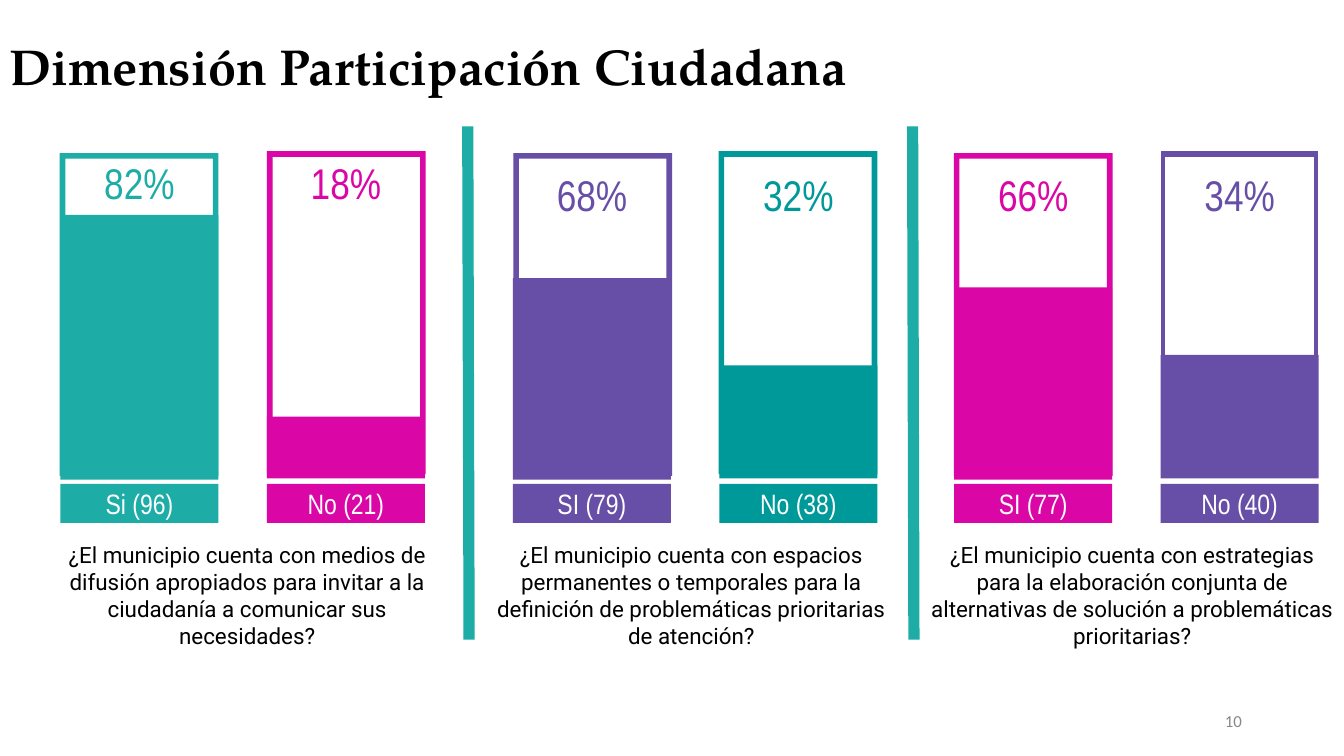
from lxml import etree
from pptx import Presentation
from pptx.dml.color import RGBColor
from pptx.enum import shapes, text
from pptx.oxml import ns
from pptx.util import Pt

TITLE = "Dimensión Participación Ciudadana"
PAGE = "10"
QUESTIONS = [
    {"left": 32.4, "percent_top": 81.4, "caption": (17.3, 230.4),
     "question": "¿El municipio cuenta con medios de difusión apropiados para invitar "
                 "a la ciudadanía a comunicar sus necesidades?",
     "answers": [("82%", "Si (96)", "turquoise", 141.8), ("18%", "No (21)", "pink", 33.1)]},
    {"left": 274.8, "percent_top": 87.8, "caption": (257, 226.8),
     "question": "¿El municipio cuenta con espacios permanentes o temporales para la "
                 "definición de problemáticas prioritarias de atención?",
     "answers": [("68%", "SI (79)", "purple", 108), ("32%", "No (38)", "teal", 60.5)]},
    {"left": 511.2, "percent_top": 87.8, "caption": (493.2, 226.8),
     "question": "¿El municipio cuenta con estrategias para la elaboración conjunta de "
                 "alternativas de solución a problemáticas prioritarias?",
     "answers": [("66%", "SI (77)", "pink", 103), ("34%", "No (40)", "purple", 66.2)]},
]
DIVIDERS = [250.6, 488.9]

THEME = {
    "colors": {"turquoise": "1DADA6", "pink": "DB06A6", "purple": "674EA7",
               "teal": "009999", "black": "000000", "white": "FFFFFF", "gray": "888888"},
    "title": ("TeX Gyre Pagella", 27),
    "percent": ("Arial Narrow", 23),
    "label": ("Arial Narrow", 15),
    "question": ("Roboto", 12),
    "page": ("Calibri", 9),
}

BAR_WIDTH, BAR_STEP = 84.7, 110.6
FRAME_TOP, FRAME_HEIGHT, FRAME_EDGE = 82, 173, 2.7
FILL_BOTTOM, ANSWER_RISE = 257, 0.7
LABEL_TOP, LABEL_HEIGHT = 259.2, 20.9
PERCENT_WIDTH, PERCENT_HEIGHT = 69.2, 33


def color(name):
    return RGBColor.from_string(THEME["colors"][name])


def write(holder, words, *, style, ink="black", align="CENTER", anchor="TOP", bold=False, inset=5):
    frame = holder.text_frame
    frame.word_wrap = True
    frame.auto_size = text.MSO_AUTO_SIZE.NONE
    frame.vertical_anchor = text.MSO_ANCHOR[anchor]
    frame.margin_left = frame.margin_right = Pt(inset)
    frame.margin_top = frame.margin_bottom = Pt(inset)
    paragraph = frame.paragraphs[0]
    paragraph.alignment = text.PP_ALIGN[align]
    paragraph.line_spacing = 1.0
    paragraph.space_before = Pt(0)
    run = paragraph.add_run()
    run.text = words
    run.font.name, size = THEME[style]
    run.font.size = Pt(size)
    run.font.bold = bold
    run.font.color.rgb = color(ink)


def textbox(slide, box, words, **formats):
    write(slide.shapes.add_textbox(*map(Pt, box)), words, **formats)


def paint(shape, ink):
    shape.shadow.inherit = False
    shape.fill.solid()
    shape.fill.fore_color.rgb = color(ink)
    shape.line.fill.background()
    return shape


def block(slide, box, ink):
    return paint(slide.shapes.add_shape(shapes.MSO_SHAPE.RECTANGLE, *map(Pt, box)), ink)


def hollow_bar(slide, left, top, ink):
    right, bottom = left + BAR_WIDTH, top + FRAME_HEIGHT
    edge = FRAME_EDGE
    outer = [(left, top), (left, bottom), (right, bottom), (right, top)]
    inner = [(right - edge, top + edge), (right - edge, bottom - edge),
             (left + edge, bottom - edge), (left + edge, top + edge)]
    builder = slide.shapes.build_freeform(*outer[0], scale=Pt(1))
    builder.add_line_segments(outer[1:], close=True)
    builder.move_to(*inner[0])
    builder.add_line_segments(inner[1:], close=True)
    paint(builder.convert_to_shape(), ink)


def answer_bar(slide, left, rise, percent_top, answer):
    percent, label, ink, height = answer
    hollow_bar(slide, left, FRAME_TOP - rise, ink)
    block(slide, (left, FILL_BOTTOM - rise - height, BAR_WIDTH, height), ink)
    percent_left = left + (BAR_WIDTH - PERCENT_WIDTH) / 2
    textbox(slide, (percent_left, percent_top, PERCENT_WIDTH, PERCENT_HEIGHT), percent,
            style="percent", ink=ink, anchor="MIDDLE")
    tag = block(slide, (left, LABEL_TOP, BAR_WIDTH, LABEL_HEIGHT), ink)
    write(tag, label, style="label", ink="white", anchor="MIDDLE")


def divider(slide, left):
    ends = map(Pt, (left, 67.7, left + 0.7, 342.7))
    rule = slide.shapes.add_connector(shapes.MSO_CONNECTOR.STRAIGHT, *ends)
    rule.line.color.rgb = color("turquoise")
    rule.line.width = Pt(6)
    etree.SubElement(rule._element.spPr, ns.qn("a:effectLst"))


def main():
    deck = Presentation()
    deck.slide_width, deck.slide_height = Pt(720), Pt(405)
    slide = deck.slides.add_slide(deck.slide_layouts[5])
    title = slide.shapes.title
    title.left, title.top, title.width, title.height = map(Pt, (0, 13.7, 489.6, 44))
    write(title, TITLE, style="title", align="JUSTIFY", bold=True)

    for group in QUESTIONS:
        for index, answer in enumerate(group["answers"]):
            answer_bar(slide, group["left"] + index * BAR_STEP, index * ANSWER_RISE,
                       group["percent_top"], answer)
        left, width = group["caption"]
        textbox(slide, (left, 285.1, width, 64), group["question"], style="question")
    for left in DIVIDERS:
        divider(slide, left)
    textbox(slide, (508.3, 375.1, 162, 21.6), PAGE, style="page", ink="gray",
            align="RIGHT", anchor="MIDDLE")
    deck.save("out.pptx")


if __name__ == "__main__":
    main()
